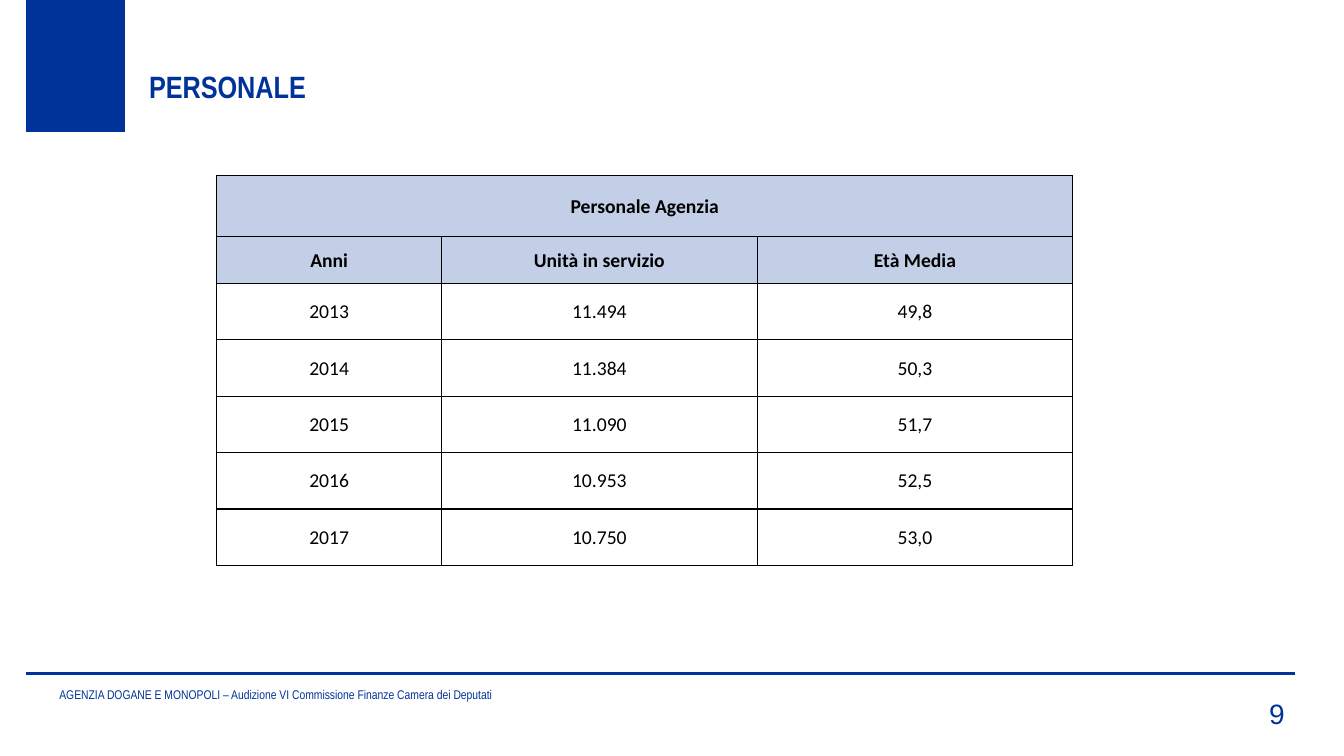
from lxml.etree import SubElement
from pptx import Presentation
from pptx.dml.color import RGBColor
from pptx.enum.shapes import MSO_CONNECTOR, MSO_SHAPE
from pptx.enum.text import MSO_ANCHOR, PP_ALIGN
from pptx.oxml.ns import qn
from pptx.util import Pt

SCALE = 9144  # EMU per px, 100 px to the inch
COLORS = {"blue": "003399", "pale": "C3CFE7", "black": "000000"}
HEADS = ["Anni", "Unità in servizio", "Età Media"]
STAFF = [
    ["2013", "11.494", "49,8"],
    ["2014", "11.384", "50,3"],
    ["2015", "11.090", "51,7"],
    ["2016", "10.953", "52,5"],
    ["2017", "10.750", "53,0"],
]


def px(*sizes):
    return [size * SCALE for size in sizes]


def color(name):
    return RGBColor.from_string(COLORS[name])


def write(frame, text, size=14, face="Arial Narrow", ink="blue", bold=False,
          align=PP_ALIGN.LEFT):
    para = frame.paragraphs[0]
    para.alignment = align
    run = para.add_run()
    run.text = text
    font = run.font
    font.size, font.name, font.bold = Pt(size), face, bold
    font.color.rgb = color(ink)


class Page:
    def __init__(self, slide):
        self.shapes = slide.shapes

    def block(self, *box, fill="blue"):
        shape = self.shapes.add_shape(MSO_SHAPE.RECTANGLE, *px(*box))
        shape.shadow.inherit = False
        shape.fill.solid()
        shape.fill.fore_color.rgb = color(fill)
        shape.line.fill.background()

    def rule(self, *ends, ink="blue", width=2.25):
        line = self.shapes.add_connector(MSO_CONNECTOR.STRAIGHT, *px(*ends))
        line.line.color.rgb = color(ink)
        line.line.width = Pt(width)
        SubElement(line._element.spPr, qn("a:effectLst"))

    def label(self, text, *box, anchor=MSO_ANCHOR.TOP, foot=5, **style):
        frame = self.shapes.add_textbox(*px(*box)).text_frame
        frame.word_wrap = True
        frame.vertical_anchor = anchor
        frame.margin_bottom = foot * SCALE
        write(frame, text, **style)

    def edge(self, cell, ink="black", width=1):
        props = cell._tc.get_or_add_tcPr()
        for side in ("lnL", "lnR", "lnT", "lnB"):
            line = SubElement(props, qn(f"a:{side}"), w=str(Pt(width)))
            fill = SubElement(line, qn("a:solidFill"))
            SubElement(fill, qn("a:srgbClr"), val=COLORS[ink])

    def table(self, rows, left, top, wide, high, heads=2):
        box = px(left, top, sum(wide), sum(high))
        grid = self.shapes.add_table(len(rows), len(wide), *box).table
        grid.first_row = grid.horz_banding = False
        for col, width in zip(grid.columns, px(*wide)):
            col.width = width
        for row, height in zip(grid.rows, px(*high)):
            row.height = height
        for r, row in enumerate(rows):
            for c, text in enumerate(row):
                self.cell(grid.cell(r, c), text, r < heads)
        grid.cell(0, 0).merge(grid.cell(0, len(wide) - 1))

    def cell(self, cell, text, head):
        cell.margin_left, cell.margin_right, cell.margin_top = px(1, 1, 1)
        cell.margin_bottom = 0
        cell.vertical_anchor = MSO_ANCHOR.MIDDLE
        self.edge(cell)
        if head:
            cell.fill.solid()
            cell.fill.fore_color.rgb = color("pale")
        else:
            cell.fill.background()
        if text:
            write(cell.text_frame, text, face="Calibri", ink="black",
                  bold=head, align=PP_ALIGN.CENTER)


def main():
    deck = Presentation()
    deck.slide_width, deck.slide_height = px(1333, 750)
    page = Page(deck.slides.add_slide(deck.slide_layouts[6]))

    # Frame and title
    page.block(26, 0, 98, 131)
    page.rule(26, 668, 1284, 668)
    page.label("PERSONALE", 138, 62, 1174, 47, size=22, bold=True)

    # Footer and page number
    page.label("AGENZIA DOGANE E MONOPOLI – Audizione VI Commissione Finanze "
               "Camera dei Deputati", 49, 661, 945, 40,
               anchor=MSO_ANCHOR.BOTTOM, size=9)
    page.label("9", 1168, 671, 116, 54, anchor=MSO_ANCHOR.BOTTOM, foot=1,
               size=20, face="Arial", align=PP_ALIGN.RIGHT)

    # Staff by year
    rows = [["Personale Agenzia", "", ""], HEADS] + STAFF
    page.table(rows, 215, 174, [223, 313, 313], [61, 46] + [56] * len(STAFF))

    deck.save("out.pptx")


if __name__ == "__main__":
    main()
